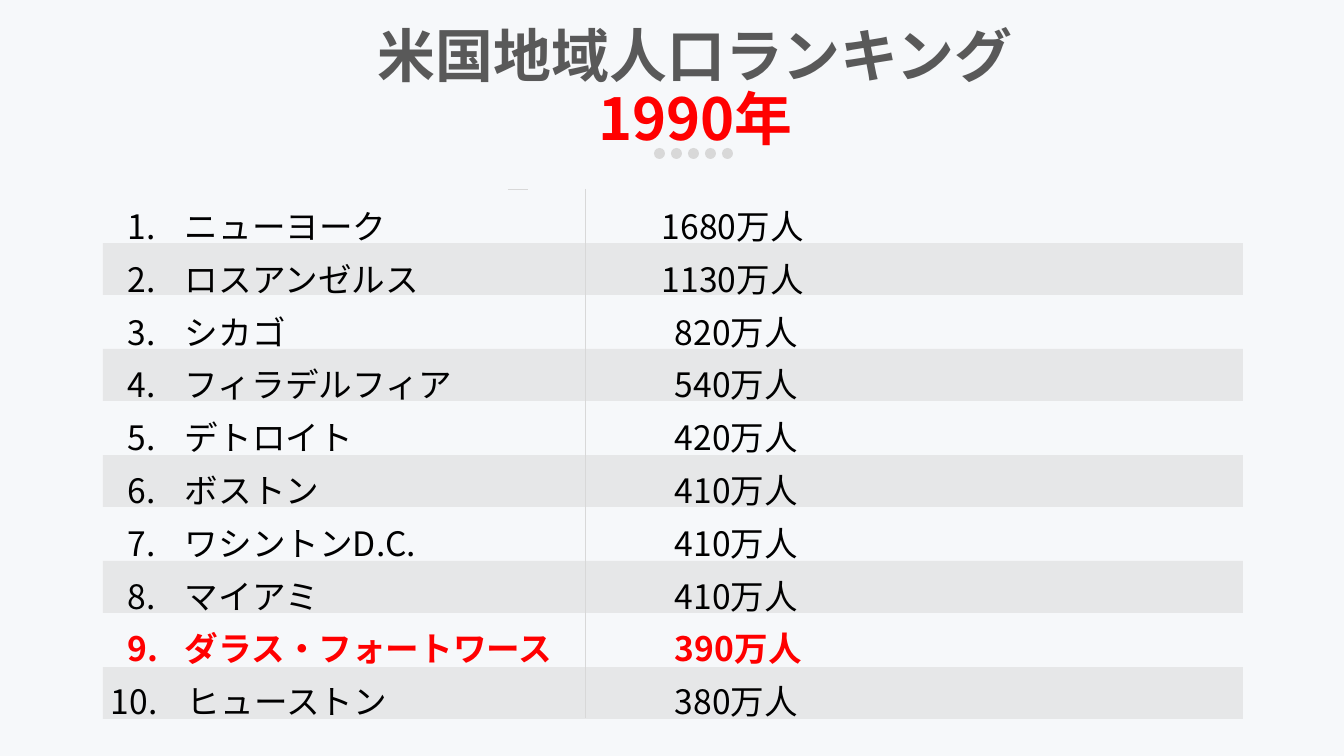
from dataclasses import dataclass

from lxml.etree import SubElement
from pptx import Presentation
from pptx.dml.color import RGBColor
from pptx.enum.shapes import MSO_CONNECTOR, MSO_SHAPE
from pptx.enum.text import MSO_ANCHOR, PP_ALIGN
from pptx.oxml.ns import qn
from pptx.util import Pt

EMU_PER_PX = 914400 / 67.2


def px(length):
    return round(length * EMU_PER_PX)


@dataclass(frozen=True)
class Theme:
    font: str = "Noto Sans CJK JP"
    background: str = "F6F8FA"
    gray: str = "D8D8D8"
    title: str = "595959"
    text: str = "000000"
    accent: str = "FF0000"
    title_size: int = 62
    title_leading: int = 67
    row_size: int = 36
    row_leading: int = 46
    line_width: float = 0.75


class SlideBuilder:
    def __init__(self, deck, theme):
        self.theme = theme
        self.page = deck.slides.add_slide(deck.slide_layouts[6])
        fill = self.page.background.fill
        fill.solid()
        fill.fore_color.rgb = RGBColor.from_string(theme.background)

    def shape(self, kind, left, top, width, height, parent=None, alpha=None):
        shapes = (parent or self.page).shapes
        shape = shapes.add_shape(kind, px(left), px(top), px(width), px(height))
        shape.shadow.inherit = False
        shape.line.fill.background()
        shape.fill.solid()
        shape.fill.fore_color.rgb = RGBColor.from_string(self.theme.gray)
        if alpha is not None:
            color = shape.fill._xPr.find(qn("a:solidFill"))[0]
            SubElement(color, qn("a:alpha"), val=str(alpha * 1000))

    def stripe(self, top):
        self.shape(MSO_SHAPE.RECTANGLE, 103, top, 1140, 52, alpha=50)

    def dots(self, left, top, count):
        group = self.page.shapes.add_group_shape()
        for index in range(count):
            self.shape(MSO_SHAPE.OVAL, left + 17 * index, top, 11, 11, parent=group)

    def line(self, start_x, start_y, end_x, end_y):
        line = self.page.shapes.add_connector(
            MSO_CONNECTOR.STRAIGHT, px(start_x), px(start_y), px(end_x), px(end_y)
        )
        line.line.color.rgb = RGBColor.from_string(self.theme.gray)
        line.line.width = Pt(self.theme.line_width)
        SubElement(line._element.spPr, qn("a:effectLst"))

    def text_box(self, text, left, top, width, height, size, leading, colors,
                 bold=False, align=PP_ALIGN.LEFT, tab=None):
        box = self.page.shapes.add_textbox(px(left), px(top), px(width), px(height))
        frame = box.text_frame
        frame.word_wrap = True
        frame.vertical_anchor = MSO_ANCHOR.TOP
        frame.margin_left = frame.margin_right = px(10)
        frame.margin_top = frame.margin_bottom = px(5)
        para = frame.paragraphs[0]
        para.text = text
        para.alignment = align
        para.line_spacing = Pt(leading)
        if tab is not None:
            tabs = SubElement(para._p.get_or_add_pPr(), qn("a:tabLst"))
            SubElement(tabs, qn("a:tab"), pos=str(px(tab)), algn="l")
        for span, color in zip(para.runs, colors):
            span.font.name = self.theme.font
            span.font.size = Pt(size)
            span.font.bold = bold
            span.font.color.rgb = RGBColor.from_string(color)
            SubElement(span.font._element, qn("a:ea"), typeface=self.theme.font)

    def title(self, heading, year):
        theme = self.theme
        self.text_box(f"{heading}\v{year}", 100, 22, 1191, 73,
                      theme.title_size, theme.title_leading,
                      [theme.title, theme.accent], bold=True, align=PP_ALIGN.CENTER)

    def ranking_row(self, rank, region, population, top, highlighted):
        theme = self.theme
        name_left, tab = (101, 76) if rank >= 10 else (118, 57)
        value_left = 652 if len(population) > 5 else 665
        color = theme.accent if highlighted else theme.text
        for text, left, width, stop in (
            (f"{rank}.\t{region}", name_left, 465, tab),
            (population, value_left, 216, None),
        ):
            self.text_box(text, left, top, width, 41, theme.row_size,
                          theme.row_leading, [color], bold=highlighted, tab=stop)


POPULATIONS = [
    ("ニューヨーク", "1680万人"),
    ("ロスアンゼルス", "1130万人"),
    ("シカゴ", "820万人"),
    ("フィラデルフィア", "540万人"),
    ("デトロイト", "420万人"),
    ("ボストン", "410万人"),
    ("ワシントンD.C.", "410万人"),
    ("マイアミ", "410万人"),
    ("ダラス・フォートワース", "390万人"),
    ("ヒューストン", "380万人"),
]
HIGHLIGHTED_RANK = 9


def main():
    deck = Presentation()
    deck.slide_width = px(1344)
    deck.slide_height = px(756)
    builder = SlideBuilder(deck, Theme())

    for index in range(len(POPULATIONS) // 2):
        builder.stripe(243 + 106 * index)
    builder.title("米国地域人口ランキング", "1990年")
    builder.dots(654, 148, 5)
    builder.line(585, 189, 585, 718)
    builder.line(508, 189, 528, 189)
    for rank, (region, population) in enumerate(POPULATIONS, 1):
        top = round(198 + 52.8 * (rank - 1))
        builder.ranking_row(rank, region, population, top, rank == HIGHLIGHTED_RANK)

    deck.save("out.pptx")


if __name__ == "__main__":
    main()
